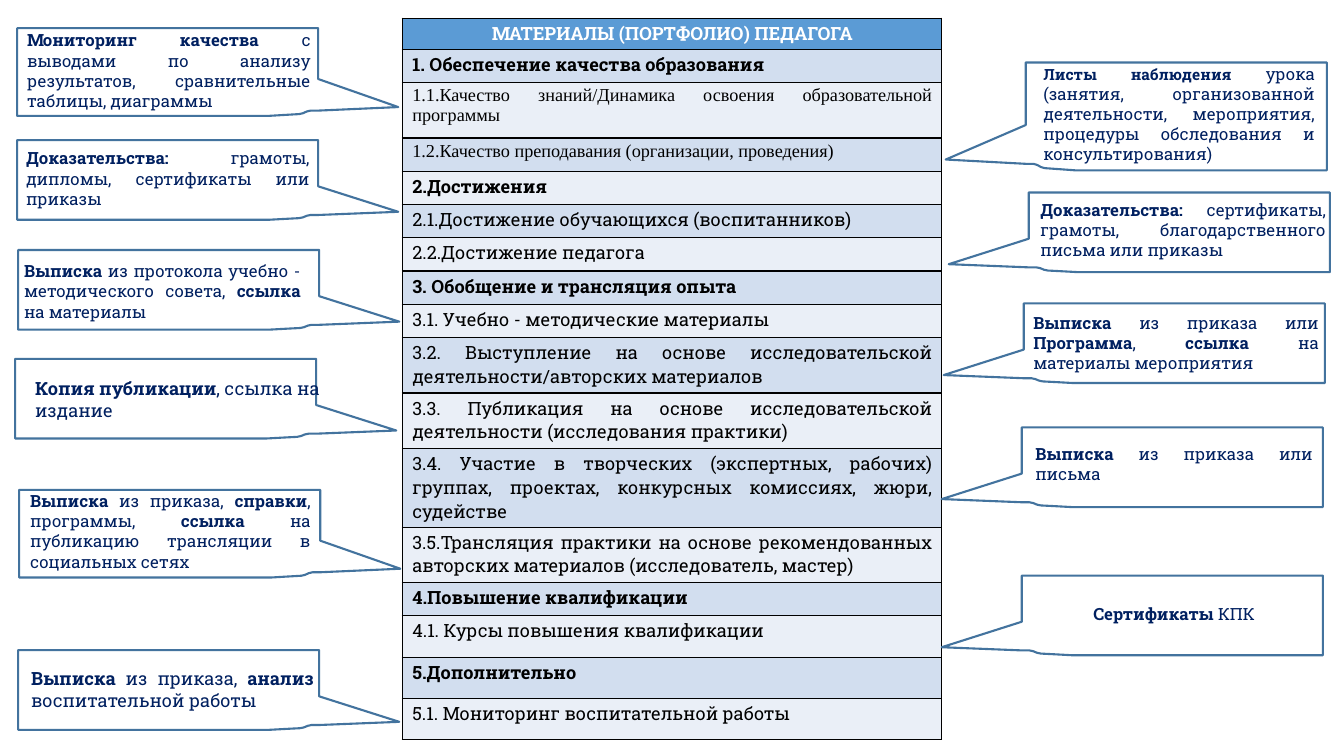
from dataclasses import dataclass

from lxml.etree import SubElement
from pptx import Presentation
from pptx.dml.color import RGBColor
from pptx.enum.text import MSO_ANCHOR, PP_ALIGN
from pptx.oxml.ns import qn
from pptx.util import Inches, Pt

# Grid of square cells: 133.3 columns by 75 rows
CELL = Inches(0.1)
COLUMNS, ROWS = 133.3, 75
CALLOUT_COLUMNS = 37.8

SLAB, TIMES = "Roboto Slab", "Times New Roman"
BLACK = RGBColor(0x00, 0x00, 0x00)
WHITE = RGBColor(0xFF, 0xFF, 0xFF)
NAVY = RGBColor(0x00, 0x20, 0x60)
OUTLINE_BLUE = RGBColor(0x43, 0x73, 0x9E)
HEADER_BLUE = RGBColor(0x5B, 0x9B, 0xD5)
BANDS = (RGBColor(0xEA, 0xEF, 0xF7), RGBColor(0xD2, 0xDE, 0xEF))

# Callout outline with its pointer to the right, as shares of its box
CALLOUT_OUTLINE = (
    (0, 0), (0.79, 0), (0.79, 0.58), (1, 0.9), (0.79, 0.94), (0.77, 0.94),
    (0.76, 0.95), (0.75, 0.97), (0.74, 0.98), (0.7, 0.99), (0.66, 1), (0, 1),
)

# Table rows: height in grid rows, text, bold, font
TABLE_ROWS = (
    (3.1, "МАТЕРИАЛЫ (ПОРТФОЛИО) ПЕДАГОГА", True, SLAB),
    (3.3, "1. Обеспечение качества образования", True, SLAB),
    (5.5, "1.1.Качество знаний/Динамика освоения образовательной программы", False, TIMES),
    (3.3, "1.2.Качество преподавания (организации, проведения)", False, TIMES),
    (3.3, "2.Достижения", True, SLAB),
    (3.3, "2.1.Достижение обучающихся (воспитанников)", False, SLAB),
    (3.3, "2.2.Достижение педагога", False, SLAB),
    (3.3, "3. Обобщение и трансляция опыта", True, SLAB),
    (3.3, "3.1. Учебно - методические материалы", False, SLAB),
    (5.5, "3.2. Выступление на основе исследовательской деятельности/авторских материалов",
     False, SLAB),
    (5.5, "3.3. Публикация на основе исследовательской деятельности (исследования практики)",
     False, SLAB),
    (7.8, "3.4. Участие в творческих (экспертных, рабочих) группах, проектах, "
     "конкурсных комиссиях, жюри, судействе", False, SLAB),
    (5.5, "3.5.Трансляция практики на основе рекомендованных авторских материалов "
     "(исследователь, мастер)", False, SLAB),
    (3.3, "4.Повышение квалификации", True, SLAB),
    (4.1, "4.1. Курсы повышения квалификации", False, SLAB),
    (4.1, "5.Дополнительно", True, SLAB),
    (4.1, "5.1. Мониторинг воспитательной работы", False, SLAB),
)


@dataclass
class Callout:
    box: tuple       # left, top, height
    text_box: tuple  # offset right, offset down, width, number of lines
    text: str        # bold parts stand between asterisks
    size: int = 12
    bold_size: int = 12
    align: PP_ALIGN = PP_ALIGN.JUSTIFY


LEFT_CALLOUTS = (
    Callout((1.7, 2.8, 8.7), (0, -0.3, 30.1, 4),
            "*Мониторинг качества *с выводами по анализу результатов, "
            "сравнительные таблицы, диаграммы"),
    Callout((1.7, 13.9, 7.9), (-0.1, 0.3, 30.1, 3),
            "*Доказательства:* грамоты, дипломы, сертификаты или приказы"),
    Callout((1.8, 24.8, 7.9), (-0.4, 0.6, 29.4, 3),
            "*Выписка *из протокола учебно - методического совета, *ссылка* на материалы"),
    Callout((1.5, 35.6, 7.9), (1, 1.3, 30.6, 2),
            "*Копия публикации*, ссылка на издание", 13, 13, PP_ALIGN.LEFT),
    Callout((1.9, 48.6, 8.7), (0.1, -0.4, 29.8, 4),
            "*Выписка *из приказа, *справки*, программы, *ссылка* на публикацию "
            "трансляции в социальных сетях"),
    Callout((1.8, 64.5, 7.9), (0.3, 1.2, 30, 2),
            "*Выписка *из приказа, *анализ *воспитательной работы", 13, 13),
)
RIGHT_CALLOUTS = (
    Callout((93.8, 6.2, 10.7), (8.7, -0.4, 28.9, 5),
            "*Листы наблюдения *урока (занятия, организованной деятельности, "
            "мероприятия, процедуры обследования и консультирования)", 12, 11),
    Callout((94.1, 19.1, 7.9), (8.1, 0.2, 30.3, 3),
            "*Доказательства:* сертификаты, грамоты, благодарственного письма или приказы"),
    Callout((93.6, 30.1, 7.9), (7.9, 0.4, 30.3, 3),
            "*Выписка *из приказа или *Программа*, *ссылка* на материалы мероприятия"),
    Callout((93.4, 42.4, 7.9), (8.3, 1.1, 29.5, 2), "*Выписка *из приказа или письма"),
    Callout((93.4, 57.1, 7.9), (7.9, 2.3, 30.3, 1), "*Сертификаты *КПК",
            align=PP_ALIGN.CENTER),
)


def grid(cells):
    return round(cells * CELL)


def set_font(font, name, size, color):
    font.name = name
    font.size = Pt(size)
    font.color.rgb = color


def add_borders(cell):
    properties = cell._tc.get_or_add_tcPr()
    for position, side in enumerate(("a:lnL", "a:lnR", "a:lnT", "a:lnB")):
        line = properties.makeelement(qn(side), {"w": str(Pt(1))})
        properties.insert(position, line)
        SubElement(SubElement(line, qn("a:solidFill")), qn("a:srgbClr"), val=str(BLACK))


def add_portfolio_table(page, left, top, width):
    height = sum(row[0] for row in TABLE_ROWS)
    table = page.shapes.add_table(len(TABLE_ROWS), 1, grid(left), grid(top),
                                  grid(width), grid(height)).table
    for index, (row_height, text, bold, font_name) in enumerate(TABLE_ROWS):
        is_header = index == 0
        table.rows[index].height = grid(row_height)
        cell = table.cell(index, 0)
        cell.margin_top = cell.margin_bottom = grid(0.3)
        cell.vertical_anchor = MSO_ANCHOR.MIDDLE if is_header else MSO_ANCHOR.TOP
        cell.fill.solid()
        cell.fill.fore_color.rgb = HEADER_BLUE if is_header else BANDS[index % 2]
        add_borders(cell)
        para = cell.text_frame.paragraphs[0]
        para.text = text
        para.alignment = PP_ALIGN.CENTER if is_header else PP_ALIGN.JUSTIFY
        set_font(para.font, font_name, 13, WHITE if is_header else BLACK)
        para.font.bold = bold


def add_callout(page, callout, points_left):
    left, top, height = callout.box

    # Outline
    points = [(grid(left + CALLOUT_COLUMNS * (1 - x if points_left else x)),
               grid(top + height * y)) for x, y in CALLOUT_OUTLINE]
    builder = page.shapes.build_freeform(*points[0])
    builder.add_line_segments(points[1:], close=True)
    outline = builder.convert_to_shape()
    outline.shadow.inherit = False
    outline.fill.background()
    outline.line.color.rgb = OUTLINE_BLUE
    outline.line.width = Pt(1.5)

    # Text
    right_by, down_by, width, lines = callout.text_box
    box = page.shapes.add_textbox(grid(left + right_by), grid(top + down_by), grid(width),
                                  grid(1 + lines * callout.size * 0.17))
    box.text_frame.word_wrap = True
    para = box.text_frame.paragraphs[0]
    para.alignment = callout.align
    set_font(para.font, SLAB, callout.size, NAVY)
    for index, part in enumerate(callout.text.split("*")):
        if part:
            span = para.add_run()
            span.text = part
            span.font.bold = index % 2 == 1
            if span.font.bold and callout.bold_size != callout.size:
                span.font.size = Pt(callout.bold_size)


def main():
    deck = Presentation()
    deck.slide_width, deck.slide_height = grid(COLUMNS), grid(ROWS)
    page = deck.slides.add_slide(deck.slide_layouts[6])
    add_portfolio_table(page, 39.9, 1.8, 53.5)
    for callout in LEFT_CALLOUTS:
        add_callout(page, callout, points_left=False)
    for callout in RIGHT_CALLOUTS:
        add_callout(page, callout, points_left=True)
    deck.save("out.pptx")


if __name__ == "__main__":
    main()
